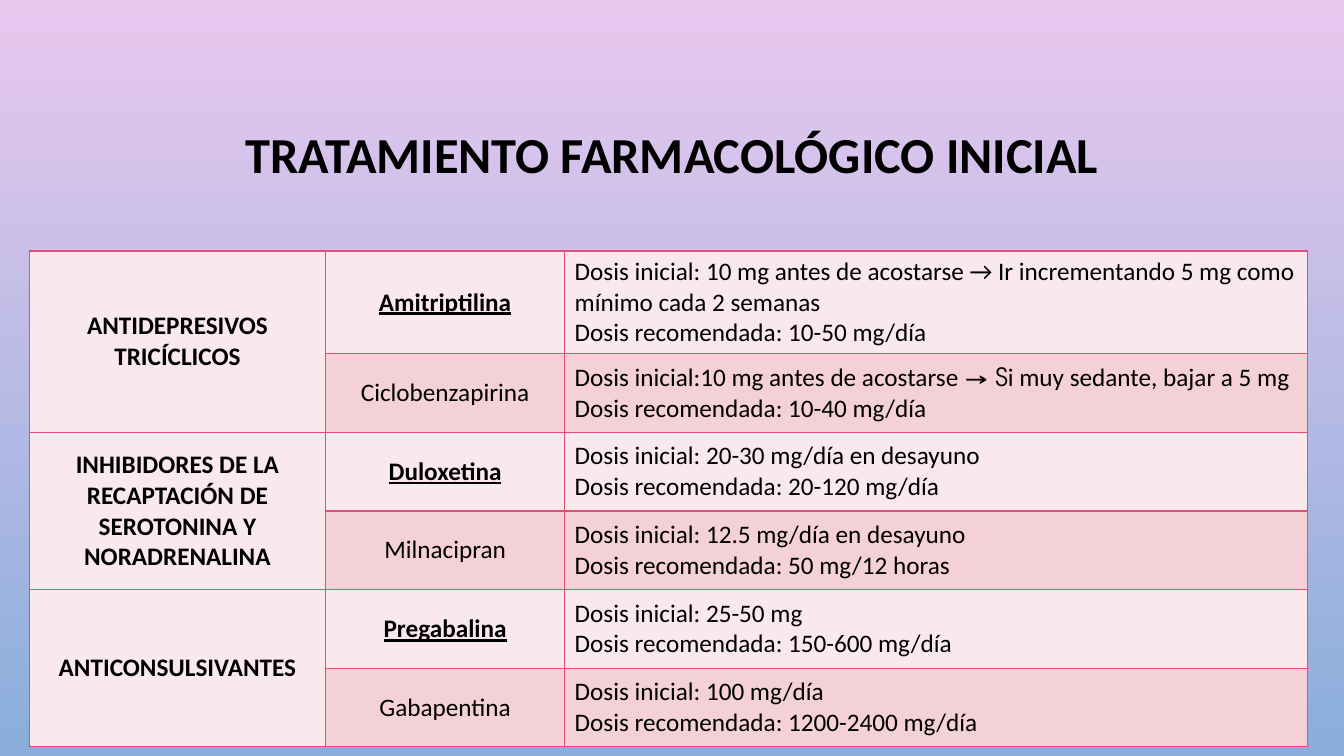
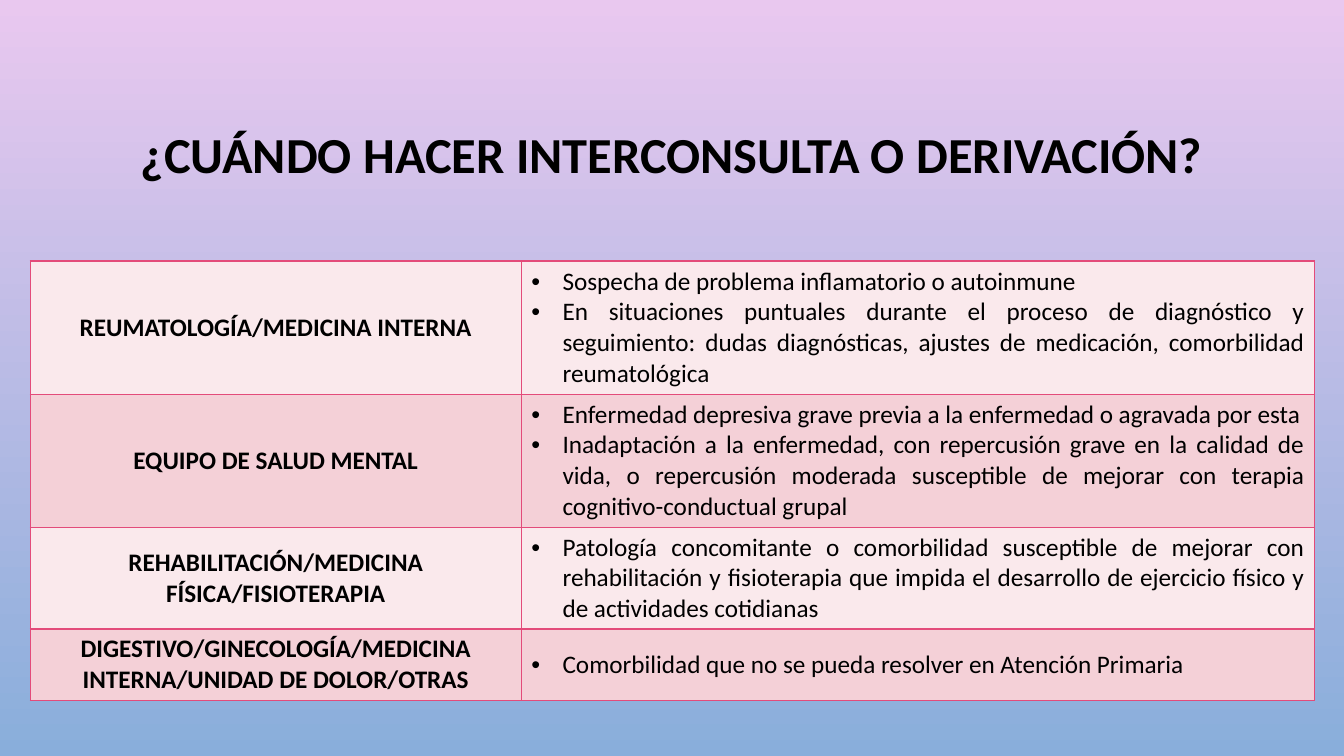
from lxml.etree import SubElement
from pptx import Presentation
from pptx.dml.color import RGBColor
from pptx.enum.text import MSO_ANCHOR as Anchor, PP_ALIGN as Align
from pptx.oxml.ns import qn
from pptx.util import Inches, Pt

# Shared look
COLORS = {
    "sky_top": "E9C8EF",
    "sky_bottom": "89AEDB",
    "text": "000000",
    "border": "E34B7A",
    "light": "FAE9EC",
    "dark": "F4D0D7",
}
FONT, ACCENT_FONT = "Calibri", "TeX Gyre Adventor"
BANDS = ("light", "dark")

# Drug family, then its drugs: name and dose lines (a tuple holds text/font parts)
TREATMENTS = [
    ("ANTIDEPRESIVOS TRICÍCLICOS", [
        ("Amitriptilina", [
            "Dosis inicial: 10 mg antes de acostarse → Ir incrementando 5 mg como mínimo cada 2 semanas",
            "Dosis recomendada: 10-50 mg/día"]),
        ("Ciclobenzapirina", [
            (("Dosis inicial:10 mg antes de acostarse ", FONT), ("→ S", ACCENT_FONT),
             ("i muy sedante, bajar a 5 mg", FONT)),
            "Dosis recomendada: 10-40 mg/día"]),
    ]),
    ("INHIBIDORES DE LA RECAPTACIÓN DE SEROTONINA Y NORADRENALINA", [
        ("Duloxetina", ["Dosis inicial: 20-30 mg/día en desayuno",
                        "Dosis recomendada: 20-120 mg/día"]),
        ("Milnacipran", ["Dosis inicial: 12.5 mg/día en desayuno",
                         "Dosis recomendada: 50 mg/12 horas"]),
    ]),
    ("ANTICONSULSIVANTES", [
        ("Pregabalina", ["Dosis inicial: 25-50 mg",
                         "Dosis recomendada: 150-600 mg/día"]),
        ("Gabapentina", ["Dosis inicial: 100 mg/día",
                         "Dosis recomendada: 1200-2400 mg/día"]),
    ]),
]

# Department and its reasons for referral
REFERRALS = [
    ("REUMATOLOGÍA/MEDICINA INTERNA", [
        "Sospecha de problema inflamatorio o autoinmune",
        "En situaciones puntuales durante el proceso de diagnóstico y seguimiento: dudas "
        "diagnósticas, ajustes de medicación, comorbilidad reumatológica"]),
    ("EQUIPO DE SALUD MENTAL", [
        "Enfermedad depresiva grave previa a la enfermedad o agravada por esta",
        "Inadaptación a la enfermedad, con repercusión grave en la calidad de vida, o repercusión "
        "moderada susceptible de mejorar con terapia cognitivo-conductual grupal"]),
    ("REHABILITACIÓN/MEDICINA FÍSICA/FISIOTERAPIA", [
        "Patología concomitante o comorbilidad susceptible de mejorar con rehabilitación y "
        "fisioterapia que impida el desarrollo de ejercicio físico y de actividades cotidianas"]),
    ("DIGESTIVO/GINECOLOGÍA/MEDICINA INTERNA/UNIDAD DE DOLOR/OTRAS", [
        "Comorbilidad que no se pueda resolver en Atención Primaria"]),
]


def rgb(name):
    return RGBColor.from_string(COLORS[name])


def style(paragraph, size=18, bold=False, underline=False):
    font = paragraph.font
    font.name, font.size = FONT, Pt(size)
    font.bold, font.underline = bold, underline
    font.color.rgb = rgb("text")


def add_titled_slide(prs, title):
    """Blank slide with the shared gradient and a centred title."""
    slide = prs.slides.add_slide(prs.slide_layouts[6])
    sky = slide.background.fill
    sky.gradient()
    sky.gradient_angle = 270
    for stop, position, name in zip(sky.gradient_stops, (0, 1), ("sky_top", "sky_bottom")):
        stop.position = position
        stop.color.rgb = rgb(name)

    frame = slide.shapes.add_textbox(Inches(1), Inches(0.68), Inches(11.33), Inches(1.75)).text_frame
    frame.word_wrap = True
    frame.vertical_anchor = Anchor.MIDDLE
    heading = frame.paragraphs[0]
    heading.text = title
    heading.alignment = Align.CENTER
    heading.line_spacing = 0.9
    style(heading, 36, bold=True)
    return slide


def add_grid(slide, left, top, widths, heights):
    """Table with banded rows and an even border."""
    table = slide.shapes.add_table(
        len(heights), len(widths), Inches(left), Inches(top),
        Inches(sum(widths)), Inches(sum(heights))).table
    table.first_row = table.horz_banding = False
    for column, width in zip(table.columns, widths):
        column.width = Inches(width)
    for index, (row, height) in enumerate(zip(table.rows, heights)):
        row.height = Inches(height)
        for cell in row.cells:
            add_border(cell)
            paint(cell, BANDS[index % 2])
            cell.vertical_anchor = Anchor.MIDDLE
    return table


def paint(cell, name):
    cell.fill.solid()
    cell.fill.fore_color.rgb = rgb(name)


def add_border(cell):
    properties = cell._tc.get_or_add_tcPr()
    for side in ("a:lnL", "a:lnR", "a:lnT", "a:lnB"):
        line = SubElement(properties, qn(side), w=str(Pt(1)))
        fill = SubElement(line, qn("a:solidFill"))
        SubElement(fill, qn("a:srgbClr"), val=COLORS["border"])


def add_bullet(paragraph):
    properties = paragraph._p.get_or_add_pPr()
    properties.set("marL", str(Inches(0.31)))
    properties.set("indent", str(Inches(-0.31)))
    SubElement(properties, qn("a:buFont"), typeface="Arial")
    SubElement(properties, qn("a:buChar"), char="•")


def write(cell, lines, align=Align.LEFT, bullets=False, **look):
    frame = cell.text_frame
    for index, line in enumerate(lines):
        paragraph = frame.add_paragraph() if index else frame.paragraphs[0]
        paragraph.alignment = align
        if bullets:
            add_bullet(paragraph)
        style(paragraph, **look)
        if isinstance(line, str):
            paragraph.add_run().text = line
            continue
        for text, font_name in line:
            part = paragraph.add_run()
            part.text = text
            part.font.name = font_name


def add_treatment_slide(prs):
    slide = add_titled_slide(prs, "TRATAMIENTO FARMACOLÓGICO INICIAL")
    table = add_grid(slide, 0.29, 2.49, [2.94, 2.37, 7.37], [1.02] + [0.78] * 5)
    row = 0
    for family, drugs in TREATMENTS:
        family_cell = table.cell(row, 0)
        family_cell.merge(table.cell(row + len(drugs) - 1, 0))
        write(family_cell, [family], Align.CENTER, bold=True)
        for rank, (drug, doses) in enumerate(drugs):
            preferred = rank == 0
            paint(table.cell(row, 0), "light")
            write(table.cell(row, 1), [drug], Align.CENTER, bold=preferred, underline=preferred)
            write(table.cell(row, 2), doses)
            row += 1


def add_referral_slide(prs):
    slide = add_titled_slide(prs, "¿CUÁNDO HACER INTERCONSULTA O DERIVACIÓN?")
    table = add_grid(slide, 0.3, 2.59, [4.87, 7.87], [1.32, 1.32, 1.01, 0.71])
    for row, (department, reasons) in enumerate(REFERRALS):
        write(table.cell(row, 0), [department], Align.CENTER, bold=True)
        write(table.cell(row, 1), reasons, Align.JUSTIFY, bullets=True)


def main():
    prs = Presentation()
    prs.slide_width, prs.slide_height = Inches(13.33), Inches(7.5)
    add_treatment_slide(prs)
    add_referral_slide(prs)
    prs.save("out.pptx")


if __name__ == "__main__":
    main()
